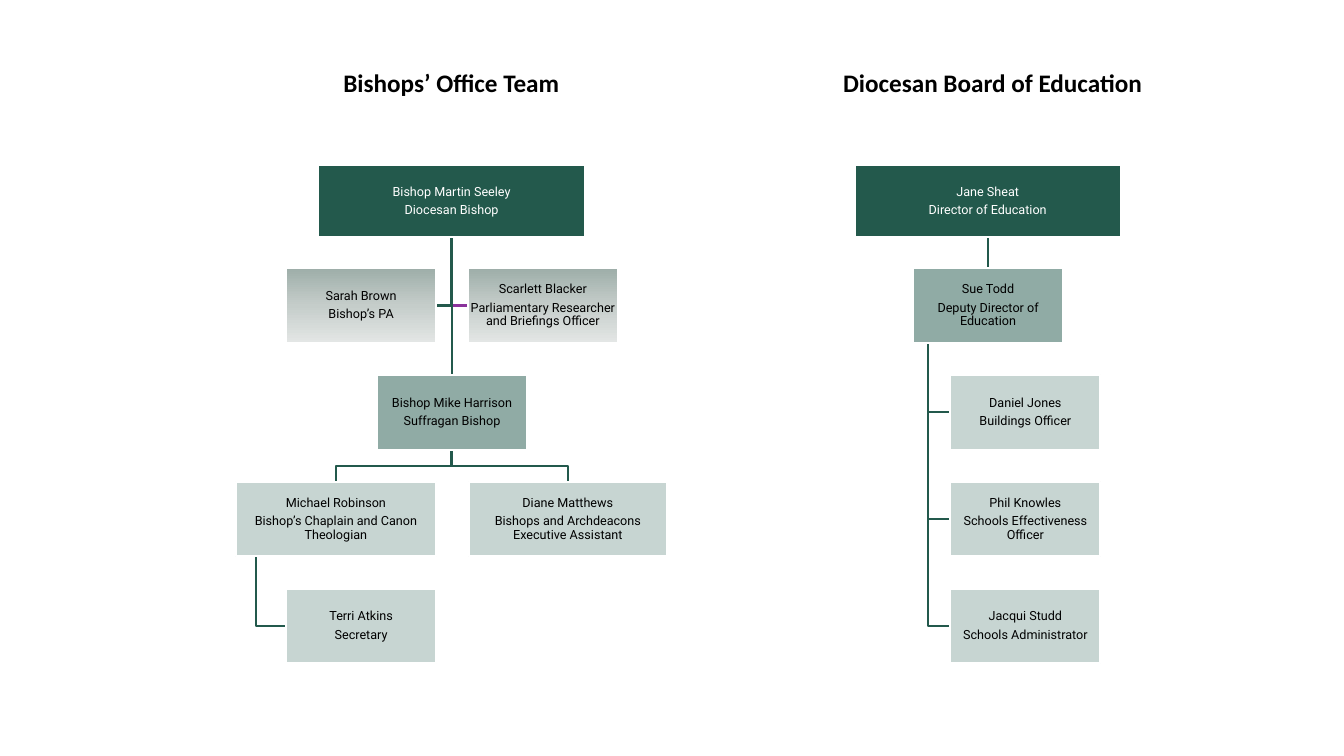
"""Build the organisation charts of the Bishops' Office and the Board of Education."""
from copy import deepcopy

from lxml.etree import SubElement
from pptx import Presentation
from pptx.dml.color import RGBColor
from pptx.enum.shapes import MSO_CONNECTOR, MSO_SHAPE
from pptx.enum.text import MSO_ANCHOR, MSO_AUTO_SIZE, PP_ALIGN
from pptx.oxml.ns import qn
from pptx.util import Cm, Pt

GREEN = RGBColor(0x23, 0x59, 0x4C)
PURPLE = RGBColor(0x8A, 0x32, 0x9B)
WHITE = RGBColor(0xFF, 0xFF, 0xFF)
BLACK = RGBColor(0x00, 0x00, 0x00)
GRADIENT = [
    (0, RGBColor(0x9E, 0xAE, 0xA9)),
    (0.5, RGBColor(0xC5, 0xCD, 0xCA)),
    (1, RGBColor(0xE3, 0xE6, 0xE5)),
]

HEAD_TOP, HEAD_W, HEAD_H = 4.17, 6.71, 1.8
BOX_W, BOX_H = 3.78, 1.88
HEAD_BOTTOM = HEAD_TOP + HEAD_H
ROWS = [6.76 + 2.69 * i for i in range(4)]
MIDS = [top + BOX_H / 2 for top in ROWS]
BISHOP_X, BOARD_X = 11.38, 24.89
PA_X, RESEARCHER_X, OFFICER_X = 7.21, 11.79, 23.95
CHAPLAIN_X, CHAPLAIN_W = 5.94, 5.05
ASSISTANT_X, ASSISTANT_W = 11.81, 5.0
SECRETARY_STEM, BOARD_STEM = 6.45, 23.39

prs = Presentation()
prs.slide_width, prs.slide_height = Cm(33.87), Cm(19.05)
s = prs.slides.add_slide(prs.slide_layouts[5])


def add_line(color, *points):
    """Draw a straight or bent line through points given in centimetres."""
    pts = [(Cm(x), Cm(y)) for x, y in points]
    if len(pts) == 2:
        line = s.shapes.add_connector(MSO_CONNECTOR.STRAIGHT, *pts[0], *pts[1])
        SubElement(line._element.spPr, qn("a:effectLst"))
    else:
        builder = s.shapes.build_freeform(*pts[0])
        builder.add_line_segments(pts[1:], close=False)
        line = builder.convert_to_shape()
        line.fill.background()
        line.shadow.inherit = False
    line.line.color.rgb = color
    line.line.width = Pt(1.5)


def add_box(x, y, w, h, name, role, opacity):
    """Add a person's box; an opacity of None gives the gradient fill."""
    sp = s.shapes.add_shape(MSO_SHAPE.RECTANGLE, Cm(x), Cm(y), Cm(w), Cm(h))
    sp.shadow.inherit = False
    sp.line.color.rgb = WHITE
    sp.line.width = Pt(1.5)
    if opacity is None:
        sp.fill.gradient()
        sp.fill.gradient_angle = 270
        stops = sp._element.spPr.find(".//" + qn("a:gsLst"))
        stops.insert(1, deepcopy(stops[0]))
        for stop, (position, color) in zip(sp.fill.gradient_stops, GRADIENT):
            stop.position = position
            stop.color.rgb = color
    else:
        sp.fill.solid()
        sp.fill.fore_color.rgb = GREEN
        if opacity < 100:
            clr = sp._element.spPr.find(qn("a:solidFill"))[0]
            SubElement(clr, qn("a:alpha"), val=str(opacity * 1000))
    tf = sp.text_frame
    tf.word_wrap = True
    tf.vertical_anchor = MSO_ANCHOR.MIDDLE
    tf.margin_left = tf.margin_right = tf.margin_top = tf.margin_bottom = Cm(0.02)
    tf.text = f"{name}\n{role}"
    for p in tf.paragraphs:
        p.alignment = PP_ALIGN.CENTER
        p.line_spacing = 0.9
        p.space_after = Pt(3.5)
        p.font.name = "Roboto"
        p.font.size = Pt(9)
        p.font.color.rgb = WHITE if opacity == 100 else BLACK


board_title = s.shapes.add_textbox(0, 0, 0, 0)
for sp, x, text in [
    (s.shapes.title, 3.3, "Bishops’ Office Team"),
    (board_title, 16.94, "Diocesan Board of Education"),
]:
    sp.left, sp.top, sp.width, sp.height = Cm(x), Cm(1.57), Cm(16.15), Cm(1.03)
    tf = sp.text_frame
    tf.word_wrap = True
    tf.auto_size = MSO_AUTO_SIZE.SHAPE_TO_FIT_TEXT
    tf.vertical_anchor = MSO_ANCHOR.TOP
    tf.text = text
    p = tf.paragraphs[0]
    p.alignment = PP_ALIGN.CENTER
    p.font.name = "Calibri"
    p.font.size = Pt(18)
    p.font.bold = True
    p.font.color.rgb = BLACK

for mid in MIDS[:0:-1]:
    add_line(GREEN, (BOARD_STEM, ROWS[0] + BOX_H), (BOARD_STEM, mid), (OFFICER_X, mid))
add_line(GREEN, (BOARD_X, HEAD_BOTTOM), (BOARD_X, ROWS[0]))

for color, x in [(PURPLE, RESEARCHER_X), (GREEN, PA_X + BOX_W)]:
    add_line(color, (BISHOP_X, HEAD_BOTTOM), (BISHOP_X, MIDS[0]), (x, MIDS[0]))
suffragan_bottom = ROWS[1] + BOX_H
fork = (suffragan_bottom + ROWS[2]) / 2
for x in (ASSISTANT_X + ASSISTANT_W / 2, CHAPLAIN_X + CHAPLAIN_W / 2):
    add_line(GREEN, (BISHOP_X, suffragan_bottom), (BISHOP_X, fork), (x, fork), (x, ROWS[2]))
add_line(GREEN, (SECRETARY_STEM, ROWS[2] + BOX_H), (SECRETARY_STEM, MIDS[3]), (PA_X, MIDS[3]))
add_line(GREEN, (BISHOP_X, HEAD_BOTTOM), (BISHOP_X, ROWS[1]))

for x, name, role in [
    (BOARD_X, "Jane Sheat", "Director of Education"),
    (BISHOP_X, "Bishop Martin Seeley", "Diocesan Bishop"),
]:
    add_box(x - HEAD_W / 2, HEAD_TOP, HEAD_W, HEAD_H, name, role, 100)

for x, row, w, name, role, opacity in [
    (23.01, 0, BOX_W, "Sue Todd", "Deputy Director of Education", 50),
    (OFFICER_X, 1, BOX_W, "Daniel Jones", "Buildings Officer", 25),
    (OFFICER_X, 2, BOX_W, "Phil Knowles", "Schools Effectiveness Officer", 25),
    (OFFICER_X, 3, BOX_W, "Jacqui Studd", "Schools Administrator", 25),
    (9.5, 1, BOX_W, "Bishop Mike Harrison", "Suffragan Bishop", 50),
    (CHAPLAIN_X, 2, CHAPLAIN_W, "Michael Robinson", "Bishop’s Chaplain and Canon Theologian", 25),
    (PA_X, 3, BOX_W, "Terri Atkins", "Secretary", 25),
    (ASSISTANT_X, 2, ASSISTANT_W, "Diane Matthews", "Bishops and Archdeacons Executive Assistant", 25),
    (PA_X, 0, BOX_W, "Sarah Brown", "Bishop’s PA", None),
    (RESEARCHER_X, 0, BOX_W, "Scarlett Blacker", "Parliamentary Researcher and Briefings Officer", None),
]:
    add_box(x, ROWS[row], w, BOX_H, name, role, opacity)

prs.save("out.pptx")
